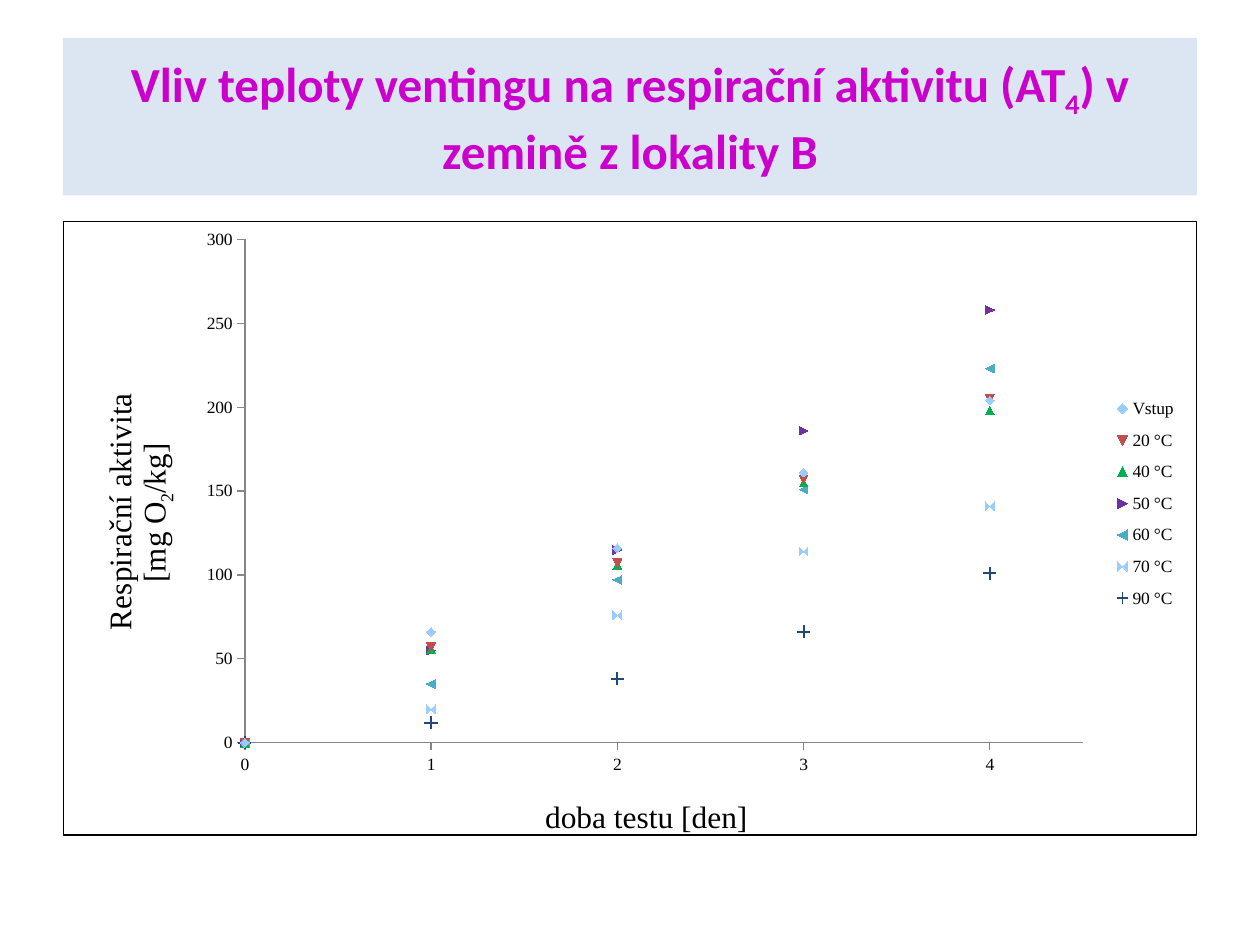
from dataclasses import dataclass

import lxml.etree
import pptx
import pptx.chart.data
import pptx.dml.color
import pptx.enum.chart
import pptx.enum.text
import pptx.oxml
import pptx.oxml.ns
import pptx.util

Pt = pptx.util.Pt
qn = pptx.oxml.ns.qn
MARKER = pptx.enum.chart.XL_MARKER_STYLE
SERIF = "Times New Roman"


@dataclass
class Series:
    name: str
    values: tuple
    color: str
    marker: MARKER = MARKER.AUTOMATIC
    size: int = 5


SERIES = [
    Series("Vstup", (0, 66, 116, 161, 204), "99CCFF", MARKER.DIAMOND),
    Series("20 °C", (0, 57, 107, 157, 205), "C0504D"),
    Series("40 °C", (0, 56, 106, 155, 198), "00B050"),
    Series("50 °C", (0, 55, 115, 186, 258), "7030A0"),
    Series("60 °C", (0, 35, 97, 151, 223), "4BACC6"),
    Series("70 °C", (0, 20, 76, 114, 141), "99CCFF"),
    Series("90 °C", (0, 12, 38, 66, 101), "1F497D", MARKER.PLUS, 7),
]


def rgb(value: str) -> pptx.dml.color.RGBColor:
    return pptx.dml.color.RGBColor.from_string(value)


def set_font(font, size: float, color: str, name: str, bold: bool = False) -> None:
    font.size, font.name, font.bold = Pt(size), name, bold
    font.color.rgb = rgb(color)


def add_run(p, text: str, size: float, color: str, name: str,
            bold: bool = False, baseline: int = 0) -> None:
    r = p.add_run()
    r.text = text
    set_font(r.font, size, color, name, bold)
    if baseline:
        r.font._element.set("baseline", str(baseline * 1000))


def set_layout(element, index: int, target: str = "", **box: float) -> None:
    for old in element.findall(qn("c:layout")):
        element.remove(old)
    layout = lxml.etree.Element(qn("c:layout"))
    manual = lxml.etree.SubElement(layout, qn("c:manualLayout"))
    settings = {"layoutTarget": target} if target else {}
    settings |= {"xMode": "edge", "yMode": "edge", **box}
    for key, value in settings.items():
        lxml.etree.SubElement(manual, qn(f"c:{key}")).set("val", str(value))
    element.insert(index, layout)


def style_axis(axis, high: float, step: float, lines: list, x: float, y: float) -> None:
    axis.minimum_scale, axis.maximum_scale, axis.major_unit = 0, high, step
    axis.has_major_gridlines = False
    axis.major_tick_mark = pptx.enum.chart.XL_TICK_MARK.OUTSIDE
    axis.format.line.color.rgb = rgb("868686")
    axis.format.line.width = Pt(0.75)
    axis.tick_labels.number_format = "General"
    axis.tick_labels.number_format_is_linked = False
    set_font(axis.tick_labels.font, 10, "000000", SERIF)
    tf = axis.axis_title.text_frame
    for i, runs in enumerate(lines):
        p = tf.add_paragraph() if i else tf.paragraphs[0]
        p.alignment = pptx.enum.text.PP_ALIGN.CENTER
        for text, baseline in runs:
            add_run(p, text, 18, "000000", SERIF, baseline=baseline)
    set_layout(axis.axis_title._element, 1, x=x, y=y)


def add_title(s) -> None:
    sp = s.shapes.add_textbox(Pt(36), Pt(21.6), Pt(648), Pt(90))
    sp.fill.solid()
    sp.fill.fore_color.rgb = rgb("DCE6F2")
    tf = sp.text_frame
    tf.word_wrap = True
    tf.vertical_anchor = pptx.enum.text.MSO_ANCHOR.MIDDLE
    p = tf.paragraphs[0]
    p.alignment = pptx.enum.text.PP_ALIGN.CENTER
    for text, baseline in (("Vliv teploty ventingu na respirační aktivitu (AT", 0),
                           ("4", -25), (") v zemině z lokality B", 0)):
        add_run(p, text, 28, "CC00CC", "Calibri", True, baseline)


def add_respiration_chart(s) -> None:
    data = pptx.chart.data.XyChartData()
    for row in SERIES:
        series = data.add_series(row.name)
        for day, value in enumerate(row.values):
            series.add_data_point(day, value)
    chart = s.shapes.add_chart(pptx.enum.chart.XL_CHART_TYPE.XY_SCATTER,
                               Pt(36), Pt(126), Pt(648), Pt(356.4), data).chart
    set_font(chart.font, 12, "000000", SERIF)
    chart.has_title = False
    plot = chart.plots[0]
    plot.vary_by_categories = False
    for series, row in zip(plot.series, SERIES):
        series.smooth = False
        series.format.line.fill.background()
        marker = series.marker
        marker.style, marker.size = row.marker, row.size
        marker.format.fill.solid()
        marker.format.fill.fore_color.rgb = rgb(row.color)
        marker.format.line.color.rgb = rgb(row.color)

    style_axis(chart.category_axis, 4.5, 1, [[("doba testu [den]", 0)]], 0.42, 0.93)
    style_axis(chart.value_axis, 300, 50,
               [[("Respirační aktivita", 0)], [("[mg O", 0), ("2", -25), ("/kg]", 0)]],
               0.03, 0.28)
    chart.value_axis.axis_title.text_frame._txBody.bodyPr.set("rot", "-5400000")

    chart.has_legend = True
    chart.legend.position = pptx.enum.chart.XL_LEGEND_POSITION.RIGHT
    chart.legend.include_in_layout = False
    set_font(chart.legend.font, 10, "000000", SERIF)
    set_layout(chart.legend._element, 1, x=0.92, y=0.27, w=0.07, h=0.38)
    space = chart._chartSpace
    set_layout(space.chart.plotArea, 0, "inner", x=0.16, y=0.03, w=0.74, h=0.82)
    space.chart.addnext(pptx.oxml.parse_xml(
        f'<c:spPr {pptx.oxml.ns.nsdecls("c", "a")}><a:noFill/><a:ln w="{Pt(0.75)}">'
        '<a:solidFill><a:srgbClr val="000000"/></a:solidFill></a:ln></c:spPr>'))


def main() -> None:
    """Build the slide on soil respiration at different venting temperatures."""
    prs = pptx.Presentation()
    prs.slide_width, prs.slide_height = Pt(720), Pt(540)
    s = prs.slides.add_slide(prs.slide_layouts[6])
    add_title(s)
    add_respiration_chart(s)
    prs.save("out.pptx")


if __name__ == "__main__":
    main()
